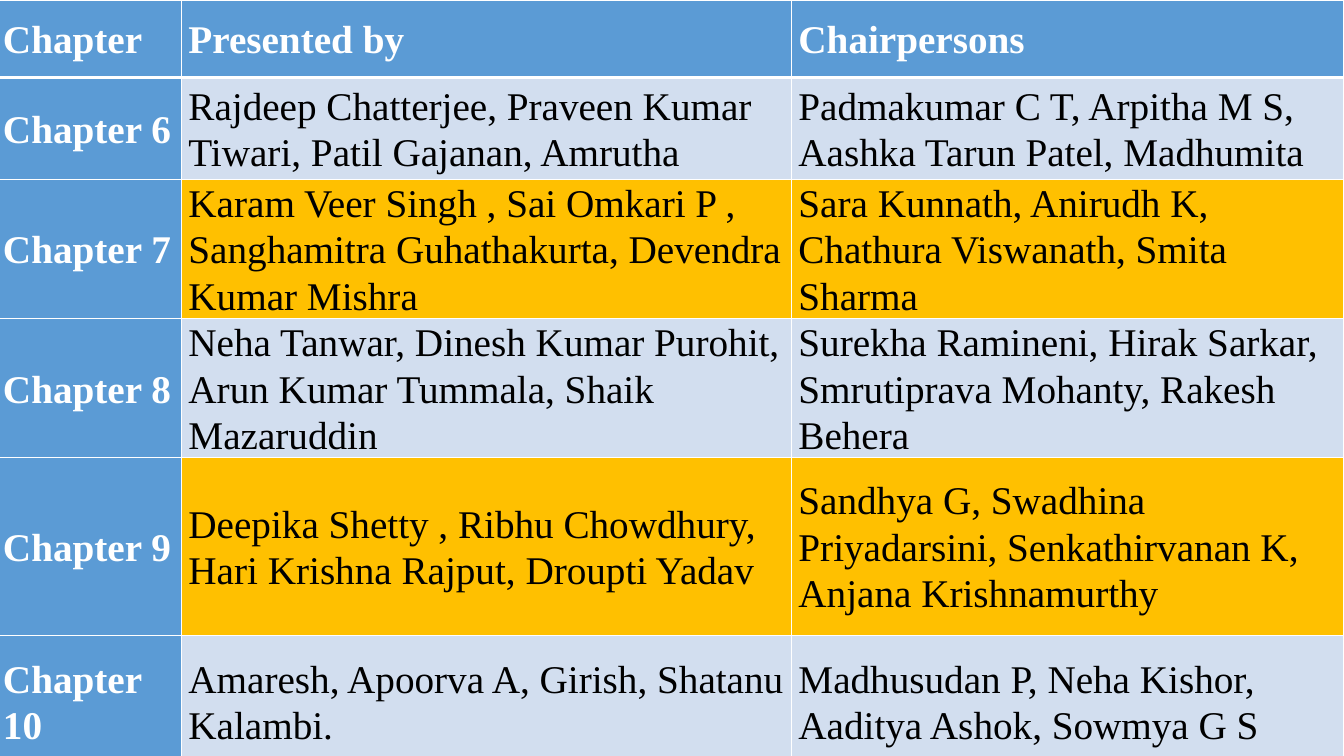
from lxml import etree
from pptx import Presentation
from pptx.dml.color import RGBColor
from pptx.enum.text import MSO_ANCHOR
from pptx.oxml.ns import qn
from pptx.util import Pt

MIDDLE = MSO_ANCHOR.MIDDLE
PX = 9144  # EMU in one px, 100 px to the inch

ROWS = [
    ("Chapter", "Presented by", "Chairpersons"),
    ("Chapter 6",
     "Rajdeep Chatterjee, Praveen Kumar Tiwari, Patil Gajanan, Amrutha",
     "Padmakumar C T, Arpitha M S, Aashka Tarun Patel, Madhumita"),
    ("Chapter 7",
     "Karam Veer Singh , Sai Omkari P , Sanghamitra Guhathakurta, Devendra Kumar Mishra",
     "Sara Kunnath, Anirudh K, Chathura Viswanath, Smita Sharma"),
    ("Chapter 8",
     "Neha Tanwar, Dinesh Kumar Purohit, Arun Kumar Tummala, Shaik Mazaruddin",
     "Surekha Ramineni, Hirak Sarkar, Smrutiprava Mohanty, Rakesh Behera"),
    ("Chapter 9",
     "Deepika Shetty , Ribhu Chowdhury, Hari Krishna Rajput, Droupti Yadav",
     "Sandhya G, Swadhina Priyadarsini, Senkathirvanan K, Anjana Krishnamurthy"),
    ("Chapter 10",
     "Amaresh, Apoorva A, Girish, Shatanu Kalambi.",
     "Madhusudan P, Neha Kishor, Aaditya Ashok, Sowmya G S"),
]
WIDTHS = [184, 605, 548]
HEIGHTS = [77, 101, 132, 132, 176, 132]
LEFT, TOP, INSET = -4, 0, 7
FONT, SIZE, SPACING = "Times New Roman", 28, 1.07
HEAD, BANDS = "5B9BD5", ("FFC000", "D2DEEF")
WHITE, BLACK = "FFFFFF", "000000"


def color(code):
    return RGBColor.from_string(code)


def add_edge(cell, side, width):
    """Draw a white border on one side of a cell: L, R, T or B."""
    props = cell._tc.get_or_add_tcPr()
    line = etree.SubElement(props, qn("a:ln" + side), w=str(Pt(width)))
    fill = etree.SubElement(line, qn("a:solidFill"))
    etree.SubElement(fill, qn("a:srgbClr"), val=WHITE)


def fill_cell(cell, text, row, col):
    head = row == 0 or col == 0
    for side in "LRTB":
        thick = (row == 0 and side == "B") or (row == 1 and side == "T")
        add_edge(cell, side, 3 if thick else 1)
    cell.fill.solid()
    cell.fill.fore_color.rgb = color(HEAD if head else BANDS[row % 2])
    cell.vertical_anchor = MIDDLE
    cell.margin_left = cell.margin_right = INSET * PX
    cell.margin_top = cell.margin_bottom = 0
    cell.text_frame.text = text
    para = cell.text_frame.paragraphs[0]
    para.line_spacing = SPACING
    font = para.runs[0].font
    font.name, font.size, font.bold = FONT, Pt(SIZE), head
    font.color.rgb = color(WHITE if head else BLACK)


def main():
    deck = Presentation()
    deck.slide_width, deck.slide_height = 1333 * PX, 750 * PX
    slide = deck.slides.add_slide(deck.slide_layouts[6])
    table = slide.shapes.add_table(
        len(ROWS), len(WIDTHS), LEFT * PX, TOP * PX,
        sum(WIDTHS) * PX, sum(HEIGHTS) * PX).table
    for col, width in enumerate(WIDTHS):
        table.columns[col].width = width * PX
    for row, texts in enumerate(ROWS):
        table.rows[row].height = HEIGHTS[row] * PX
        for col, text in enumerate(texts):
            fill_cell(table.cell(row, col), text, row, col)
    deck.save("out.pptx")


if __name__ == "__main__":
    main()
